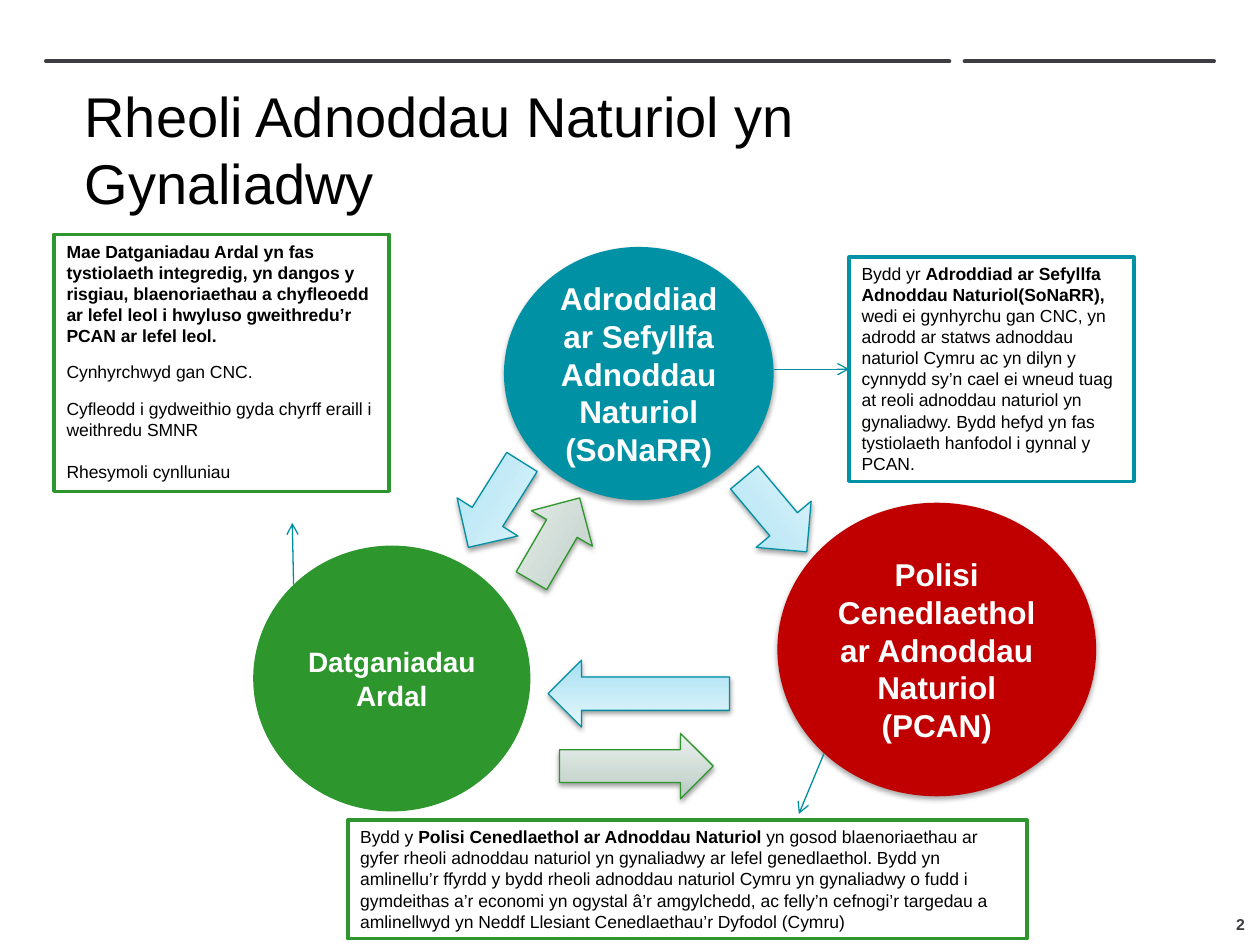
from lxml.etree import SubElement
from pptx import Presentation
from pptx.dml.color import RGBColor as Rgb
from pptx.enum.shapes import MSO_CONNECTOR as Link, MSO_SHAPE as Kind
from pptx.enum.text import MSO_ANCHOR as Anchor, PP_ALIGN as Align
from pptx.oxml.ns import qn
from pptx.util import Inches, Pt

COLS, ROWS = 100, 75
HUES = {
    "ink": "000000", "paper": "FFFFFF", "slate": "3C3C41", "teal": "0091A5",
    "edge": "008EA1", "green": "2D962D", "red": "C00000",
}
FADES = {
    "edge": ((0, "A1E0F4"), (35, "BEE8F6"), (100, "E5F7FC")),
    "green": ((0, "B6C9C1"), (35, "CCD9D3"), (100, "ECF1EF")),
}


def hue(name):
    """Return the named colour."""
    return Rgb.from_string(HUES[name])


def write(shape, paras, size=10, color="ink", bold=False, align=Align.LEFT,
          anchor=Anchor.TOP, inset=None, gaps=None, lead=None):
    """Fill a shape with paragraphs, where asterisks switch bold on and off."""
    frame = shape.text_frame
    frame.word_wrap = True
    frame.vertical_anchor = anchor
    if inset is not None:
        frame.margin_left = frame.margin_right = Inches(inset)
        frame.margin_top = frame.margin_bottom = Inches(inset)
    for i, text in enumerate(paras):
        para = frame.add_paragraph() if i else frame.paragraphs[0]
        para.alignment = align
        if lead:
            para.line_spacing = lead
        if gaps:
            para.space_after = Pt(gaps[i])
            if i:
                para.space_before = Pt(gaps[i])
        for j, part in enumerate(text.split("*")):
            if part:
                run = para.add_run()
                run.text = part
                font = run.font
                font.name, font.size = "Arial", Pt(size)
                font.bold = bold or j % 2 == 1
                font.color.rgb = hue(color)


class Deck:
    """Hold the style and the current slide."""

    def __init__(self):
        """Start a deck with one blank slide."""
        self.prs = Presentation()
        self.prs.slide_width, self.prs.slide_height = Inches(10), Inches(7.5)
        self.slide = self.prs.slides.add_slide(self.prs.slide_layouts[6])

    def x(self, col):
        """Turn columns into a length."""
        return round(self.prs.slide_width * col / COLS)

    def y(self, row):
        """Turn rows into a length."""
        return round(self.prs.slide_height * row / ROWS)

    def place(self, box):
        """Turn a grid box into left, top, width and height."""
        return [f(v) for f, v in zip((self.x, self.y, self.x, self.y), box)]

    def shape(self, kind, box, fill=None, line=None, width=1):
        """Add a preset shape without a shadow."""
        shape = self.slide.shapes.add_shape(kind, *self.place(box))
        shape.shadow.inherit = False
        if fill:
            shape.fill.solid()
            shape.fill.fore_color.rgb = hue(fill)
        if line:
            shape.line.color.rgb = hue(line)
            shape.line.width = Pt(width)
        else:
            shape.line.fill.background()
        return shape

    def shade(self, shape, alpha, dist):
        """Drop a soft shadow below a shape."""
        root = shape._element.spPr.find(qn("a:effectLst"))
        drop = SubElement(root, qn("a:outerShdw"), blurRad=str(Pt(3.1)),
                          dist=str(Pt(dist)), dir="5400000", rotWithShape="0")
        tone = SubElement(drop, qn("a:srgbClr"), val=HUES["ink"])
        SubElement(tone, qn("a:alpha"), val=str(alpha * 1000))

    def bar(self, box):
        """Add a rounded rule."""
        self.shape(Kind.ROUNDED_RECTANGLE, box, "slate").adjustments[0] = 0.5

    def disc(self, box, fill, paras, size=18, shade=True):
        """Add a circle with a centred label."""
        disc = self.shape(Kind.FLOWCHART_CONNECTOR, box, fill)
        if shade:
            self.shade(disc, 35, 1.8)
        write(disc, paras, size, "paper", True, Align.CENTER, Anchor.MIDDLE)

    def arrow(self, box, turn, line):
        """Add a block arrow with a fade."""
        arrow = self.shape(Kind.RIGHT_ARROW, box, line=line, width=0.75)
        arrow.rotation = turn
        arrow.fill.gradient()
        grad = arrow._element.spPr.find(qn("a:gradFill"))
        for child in list(grad):
            grad.remove(child)
        stops = SubElement(grad, qn("a:gsLst"))
        for pos, tone in FADES[line]:
            stop = SubElement(stops, qn("a:gs"), pos=str(pos * 1000))
            SubElement(stop, qn("a:srgbClr"), val=tone)
        SubElement(grad, qn("a:lin"), ang="16200000", scaled="0")
        self.shade(arrow, 38, 1.6)

    def note(self, box, line, paras, gaps):
        """Add a framed note."""
        note = self.shape(Kind.RECTANGLE, box, "paper", line, 2)
        write(note, paras, gaps=gaps)
        return note

    def link(self, start, end, note=None):
        """Add a thin arrow, joined to the left side of a note if given."""
        link = self.slide.shapes.add_connector(
            Link.STRAIGHT, *self.place(start + end))
        if note:
            link.end_connect(note, 1)
        link.line.color.rgb = hue("edge")
        link.line.width = Pt(0.75)
        SubElement(link.line._get_or_add_ln(), qn("a:tailEnd"), type="arrow")
        SubElement(link._element.spPr, qn("a:effectLst"))

    def label(self, box, text, **form):
        """Add a plain text box."""
        area = self.slide.shapes.add_textbox(*self.place(box))
        write(area, [text], inset=0, **form)


def main():
    """Build the slide."""
    deck = Deck()
    deck.bar((76.4, 4.7, 20.1, 0.3))
    deck.bar((3.5, 4.7, 72, 0.3))
    deck.label((6.7, 4.7, 73.2, 14.2), "Rheoli Adnoddau Naturiol yn Gynaliadwy",
               size=32, anchor=Anchor.MIDDLE)
    deck.disc((40, 19.6, 21.4, 20.1), "teal",
              ["Adroddiad ar Sefyllfa Adnoddau Naturiol", "(SoNaRR)"])
    deck.disc((20.1, 43.3, 22, 21.1), "green", ["Datganiadau Ardal"], 16, False)
    deck.disc((61.7, 39.9, 25.3, 23.3), "red",
              ["Polisi Cenedlaethol ar Adnoddau Naturiol (PCAN)"])
    for box, turn, line in (
        ((40.3, 40, 7.6, 5.6), 300.2, "green"),
        ((35.3, 37.2, 8, 5.7), 122.1, "edge"),
        ((57.7, 38, 7.7, 5.7), 50, "edge"),
        ((43.5, 52.4, 14.4, 5.3), 180, "edge"),
        ((44.4, 58.2, 12.2, 5.2), 0, "green"),
    ):
        deck.arrow(box, turn, line)
    deck.note((4.3, 18.6, 26.6, 20.4), "green", [
        "*Mae Datganiadau Ardal yn fas tystiolaeth integredig, yn dangos y "
        "risgiau, blaenoriaethau a chyfleoedd ar lefel leol i hwyluso "
        "gweithredu’r PCAN ar lefel leol.*",
        "Cynhyrchwyd gan CNC.",
        "Cyfleodd i gydweithio gyda chyrff eraill i weithredu SMNR",
        "Rhesymoli cynlluniau",
    ], (6, 3, 6, 6))
    report = deck.note((67.4, 20.4, 22.6, 17.8), "teal", [
        "Bydd yr *Adroddiad ar Sefyllfa Adnoddau Naturiol(SoNaRR), *wedi ei "
        "gynhyrchu gan CNC, yn adrodd ar statws adnoddau naturiol Cymru ac yn "
        "dilyn y cynnydd sy’n cael ei wneud tuag at reoli adnoddau naturiol yn "
        "gynaliadwy. Bydd hefyd yn fas tystiolaeth hanfodol i gynnal y PCAN.",
    ], (6,))
    deck.note((27.6, 65.1, 53.9, 9.4), "green", [
        "Bydd y *Polisi Cenedlaethol ar Adnoddau Naturiol *yn gosod "
        "blaenoriaethau ar gyfer rheoli adnoddau naturiol yn gynaliadwy ar "
        "lefel genedlaethol. Bydd yn amlinellu’r ffyrdd y bydd rheoli adnoddau "
        "naturiol Cymru yn gynaliadwy o fudd i gymdeithas a’r economi yn "
        "ogystal â’r amgylchedd, ac felly’n cefnogi’r targedau a amlinellwyd "
        "yn Neddf Llesiant Cenedlaethau’r Dyfodol (Cymru)",
    ], (3,))
    deck.link((23.3, 46.4), (23.2, 41.5))
    deck.link((61.4, 29.3), (67.4, 29.3), report)
    deck.link((65.4, 59.8), (63.4, 64.6))
    deck.label((75.5, 70.1, 23.3, 4), "2", size=9, color="slate", bold=True,
               align=Align.RIGHT, anchor=Anchor.BOTTOM)
    deck.prs.save("out.pptx")


if __name__ == "__main__":
    main()
